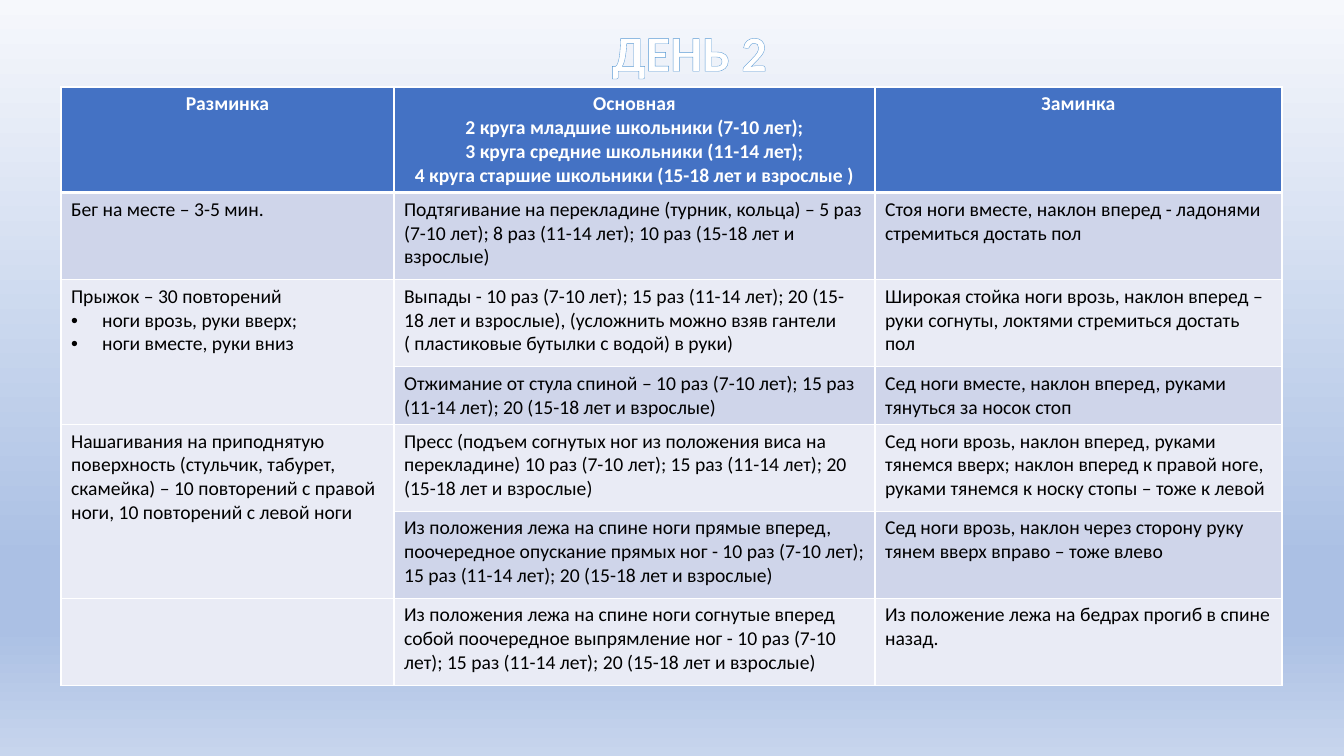
from lxml.etree import SubElement
from pptx import Presentation
from pptx.dml.color import RGBColor
from pptx.enum.text import MSO_AUTO_SIZE, PP_ALIGN
from pptx.oxml import parse_xml
from pptx.oxml.ns import nsdecls, qn
from pptx.util import Pt

EMU_PER_PX = 914400 / 100.8
FONT = "Calibri"
WHITE, BLACK, OUTLINE = "FFFFFF", "000000", "5B9BD5"
HEADER_FILL, DARK_BAND, LIGHT_BAND = "4472C4", "CFD5EA", "E9EBF5"
BACKGROUND_STOPS = [(0, "F6F8FC"), (74, "ABC0E4"), (83, "ABC0E4"), (100, "C7D5ED")]
COLUMN_WIDTHS = [333, 481, 407]
ROW_HEIGHTS = [104, 87, 87, 57, 87, 87, 87]
ROW_FILLS = [HEADER_FILL, DARK_BAND, LIGHT_BAND, DARK_BAND, LIGHT_BAND, DARK_BAND, LIGHT_BAND]
MERGED_ROWS = [(2, 3), (4, 5)]
BULLET = "•"

WORKOUT = [
    ["Разминка",
     "Основная\n2 круга младшие школьники (7-10 лет);\n3 круга средние школьники (11-14 лет);\n"
     "4 круга старшие школьники (15-18 лет и взрослые )",
     "Заминка"],
    ["Бег на месте – 3-5 мин.",
     "Подтягивание на перекладине (турник, кольца) – 5 раз (7-10 лет); 8 раз (11-14 лет); "
     "10 раз (15-18 лет и взрослые)",
     "Стоя ноги вместе, наклон вперед - ладонями стремиться достать пол"],
    ["Прыжок – 30 повторений\n•ноги врозь, руки вверх;\n•ноги вместе, руки вниз",
     "Выпады - 10 раз (7-10 лет); 15 раз (11-14 лет); 20 (15-18 лет и взрослые), "
     "(усложнить можно взяв гантели ( пластиковые бутылки с водой) в руки)",
     "Широкая стойка ноги врозь, наклон вперед – руки согнуты, локтями стремиться достать пол"],
    ["",
     "Отжимание от стула спиной – 10 раз (7-10 лет); 15 раз (11-14 лет); 20 (15-18 лет и взрослые)",
     "Сед ноги вместе, наклон вперед, руками тянуться за носок стоп"],
    ["Нашагивания на приподнятую поверхность (стульчик, табурет, скамейка) – "
     "10 повторений с правой ноги, 10 повторений с левой ноги",
     "Пресс (подъем согнутых ног из положения виса на перекладине) 10 раз (7-10 лет); "
     "15 раз (11-14 лет); 20 (15-18 лет и взрослые)",
     "Сед ноги врозь, наклон вперед, руками тянемся вверх; наклон вперед к правой ноге, "
     "руками тянемся к носку стопы – тоже к левой"],
    ["",
     "Из положения лежа на спине ноги прямые вперед, поочередное опускание прямых ног - "
     "10 раз (7-10 лет); 15 раз (11-14 лет); 20 (15-18 лет и взрослые)",
     "Сед ноги врозь, наклон через сторону руку тянем вверх вправо – тоже влево"],
    ["",
     "Из положения лежа на спине ноги согнутые вперед собой поочередное выпрямление ног - "
     "10 раз (7-10 лет); 15 раз (11-14 лет); 20 (15-18 лет и взрослые)",
     "Из положение лежа на бедрах прогиб в спине назад."],
]


def px(length):
    """Turn pixels into EMU."""
    return round(length * EMU_PER_PX)


def color(hex_string):
    """Turn a hex string into a colour."""
    return RGBColor.from_string(hex_string)


def line_xml(tag, hex_string, points):
    """Make a solid line element of the given tag."""
    return parse_xml(
        f'<a:{tag} {nsdecls("a")} w="{Pt(points)}"><a:solidFill>'
        f'<a:srgbClr val="{hex_string}"/></a:solidFill></a:{tag}>')


def style_font(font, size, hex_string, bold):
    """Set typeface, size, colour and weight."""
    font.name = FONT
    font.size = Pt(size)
    font.bold = bold
    font.color.rgb = color(hex_string)


def paint_background(slide):
    """Fill the slide with the vertical gradient."""
    fill = slide.background.fill
    fill.gradient()
    fill.gradient_angle = 270
    stops = next(slide.element.iter(qn("a:gsLst")))
    for default_stop in list(stops):
        stops.remove(default_stop)
    for percent, hex_string in BACKGROUND_STOPS:
        stop = SubElement(stops, qn("a:gs"), pos=str(percent * 1000))
        SubElement(stop, qn("a:srgbClr"), val=hex_string)


def add_title(slide, left, top, width, height):
    """Add the outlined day title."""
    title = slide.shapes.add_textbox(px(left), px(top), px(width), px(height))
    frame = title.text_frame
    frame.text = "ДЕНЬ 2"
    frame.word_wrap = False
    frame.auto_size = MSO_AUTO_SIZE.SHAPE_TO_FIT_TEXT
    heading = frame.paragraphs[0]
    heading.alignment = PP_ALIGN.CENTER
    run = heading.runs[0]
    style_font(run.font, 36, WHITE, True)
    run.font._element.insert(0, line_xml("ln", OUTLINE, 0.8))


def add_bullet(paragraph):
    """Give a paragraph a hanging bullet."""
    properties = paragraph._p.get_or_add_pPr()
    properties.set("marL", str(px(31)))
    properties.set("indent", str(-px(31)))
    SubElement(properties, qn("a:buFont"), typeface="Arial")
    SubElement(properties, qn("a:buChar"), char=BULLET)


def fill_cell(cell, content, row):
    """Write and format one cell of the given row."""
    is_header = row == 0
    cell.fill.solid()
    cell.fill.fore_color.rgb = color(ROW_FILLS[row])
    widths = {"lnL": 1, "lnR": 1, "lnT": 3 if row == 1 else 1, "lnB": 3 if is_header else 1}
    for position, (tag, points) in enumerate(widths.items()):
        cell._tc.get_or_add_tcPr().insert(position, line_xml(tag, WHITE, points))
    cell.text_frame.text = content
    for paragraph in cell.text_frame.paragraphs:
        if paragraph.text.startswith(BULLET):
            paragraph.text = paragraph.text.removeprefix(BULLET)
            add_bullet(paragraph)
        if is_header:
            paragraph.alignment = PP_ALIGN.CENTER
        for run in paragraph.runs:
            style_font(run.font, 14, WHITE if is_header else BLACK, is_header)


def add_workout_table(slide, left, top):
    """Add the table of warm-up, main part and cool-down."""
    table = slide.shapes.add_table(
        len(ROW_HEIGHTS), len(COLUMN_WIDTHS), px(left), px(top),
        px(sum(COLUMN_WIDTHS)), px(sum(ROW_HEIGHTS))).table
    for column, width in zip(table.columns, COLUMN_WIDTHS):
        column.width = px(width)
    for row, height in zip(table.rows, ROW_HEIGHTS):
        row.height = px(height)
    for row, exercises in enumerate(WORKOUT):
        for column, exercise in enumerate(exercises):
            fill_cell(table.cell(row, column), exercise, row)
    for first, last in MERGED_ROWS:
        table.cell(first, 0).merge(table.cell(last, 0))


def main():
    """Build and save the slide."""
    presentation = Presentation()
    presentation.slide_width = px(1344)
    presentation.slide_height = px(756)
    slide = presentation.slides.add_slide(presentation.slide_layouts[6])
    paint_background(slide)
    add_workout_table(slide, 61, 87)
    add_title(slide, 601, 16, 177, 72)
    presentation.save("out.pptx")


if __name__ == "__main__":
    main()
